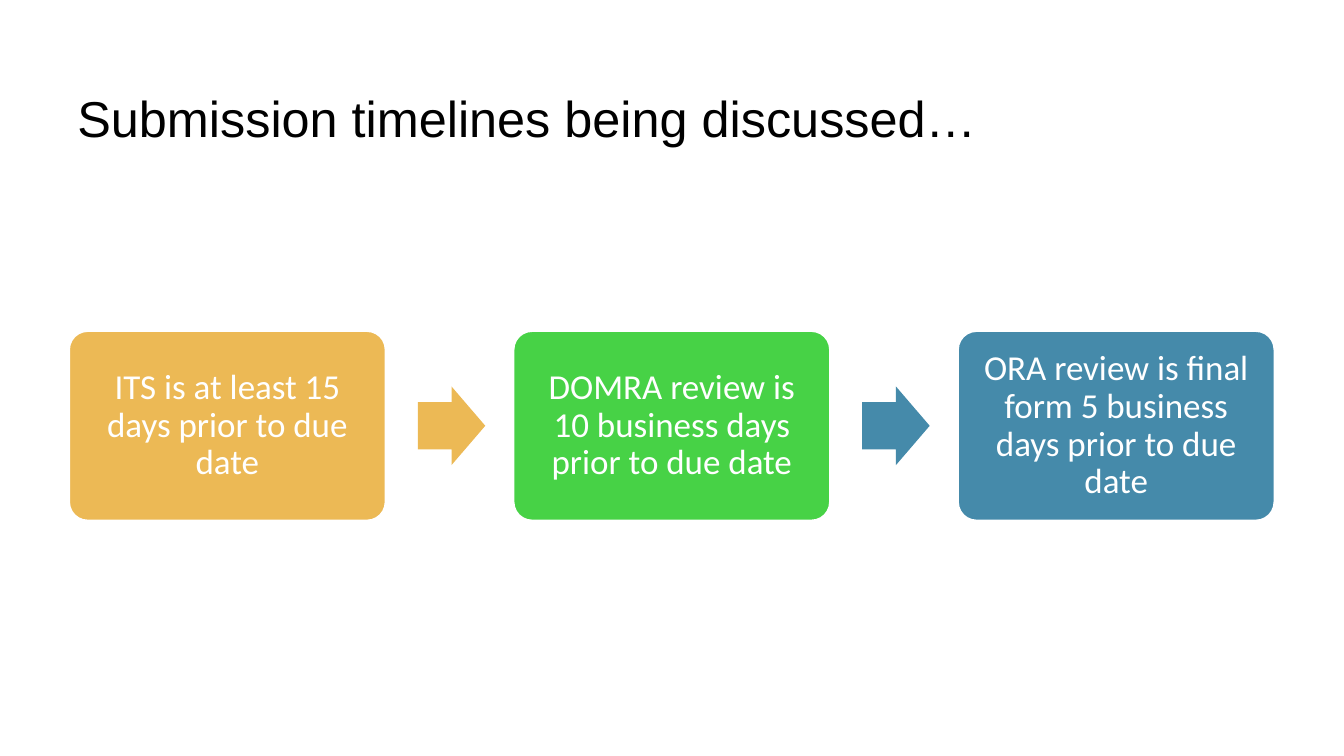
"""Build the submission timelines slide: three steps joined by arrows."""
from pptx import Presentation
from pptx.dml.color import RGBColor
from pptx.enum.shapes import MSO_SHAPE as SHAPE
from pptx.enum.text import MSO_ANCHOR as ANCHOR, PP_ALIGN as ALIGN
from pptx.util import Cm, Pt

TITLE = "Submission timelines being discussed…"
STEPS = [
    ("ITS is at least 15 days prior to due date", "gold"),
    ("DOMRA review is 10 business days prior to due date", "green"),
    ("ORA review is final form 5 business days prior to due date", "blue"),
]
ARROWS = ["gold", "blue"]
COLORS = {"gold": "ECB955", "green": "47D246", "blue": "458AAA",
          "white": "FFFFFF", "black": "000000"}
TITLE_FONT = {"name": "Arial", "size": Pt(36)}
STEP_FONT = {"name": "Calibri", "size": Pt(25)}
FRAME = {"word_wrap": True, "vertical_anchor": ANCHOR.MIDDLE}
STEP_FRAME = {**FRAME, **{f"margin_{side}": Cm(0.25)
                          for side in ("left", "right", "top", "bottom")}}
STEP_PARA = {"alignment": ALIGN.CENTER, "line_spacing": 0.9}

LEFT, TOP, PITCH = 1.73, 8.33, 11.2
BOX_W, BOX_H = 8, 4.8
ARROW_W, ARROW_H, ARROW_GAP = 1.7, 1.98, 0.8


def rgb(name):
    return RGBColor.from_string(COLORS[name])


def apply(target, values):
    for key, value in values.items():
        setattr(target, key, value)


def write(sp, text, font, color, frame, para):
    tf = sp.text_frame
    apply(tf, frame)
    p = tf.paragraphs[0]
    apply(p, para)
    r = p.add_run()
    r.text = text
    apply(r.font, font)
    r.font.color.rgb = rgb(color)


def add_block(s, kind, x, y, w, h, color, adjustments):
    sp = s.shapes.add_shape(kind, Cm(x), Cm(y), Cm(w), Cm(h))
    sp.shadow.inherit = False
    sp.fill.solid()
    sp.fill.fore_color.rgb = rgb(color)
    for i, value in enumerate(adjustments):
        sp.adjustments[i] = value
    return sp


def main():
    prs = Presentation()
    prs.slide_width, prs.slide_height = Cm(33.87), Cm(19.05)
    s = prs.slides.add_slide(prs.slide_layouts[6])

    title = s.shapes.add_textbox(Cm(1.7), Cm(2), Cm(30.48), Cm(1.93))
    write(title, TITLE, TITLE_FONT, "black", FRAME, {})

    for i, (text, color) in enumerate(STEPS):
        box = add_block(s, SHAPE.ROUNDED_RECTANGLE, LEFT + i * PITCH, TOP,
                        BOX_W, BOX_H, color, [0.1])
        box.line.color.rgb = rgb("white")
        box.line.width = Pt(2)
        write(box, text, STEP_FONT, "white", STEP_FRAME, STEP_PARA)

    for i, color in enumerate(ARROWS):
        arrow = add_block(s, SHAPE.RIGHT_ARROW,
                          LEFT + i * PITCH + BOX_W + ARROW_GAP,
                          TOP + (BOX_H - ARROW_H) / 2,
                          ARROW_W, ARROW_H, color, [0.6, 0.5])
        arrow.line.fill.background()

    prs.save("out.pptx")


if __name__ == "__main__":
    main()
